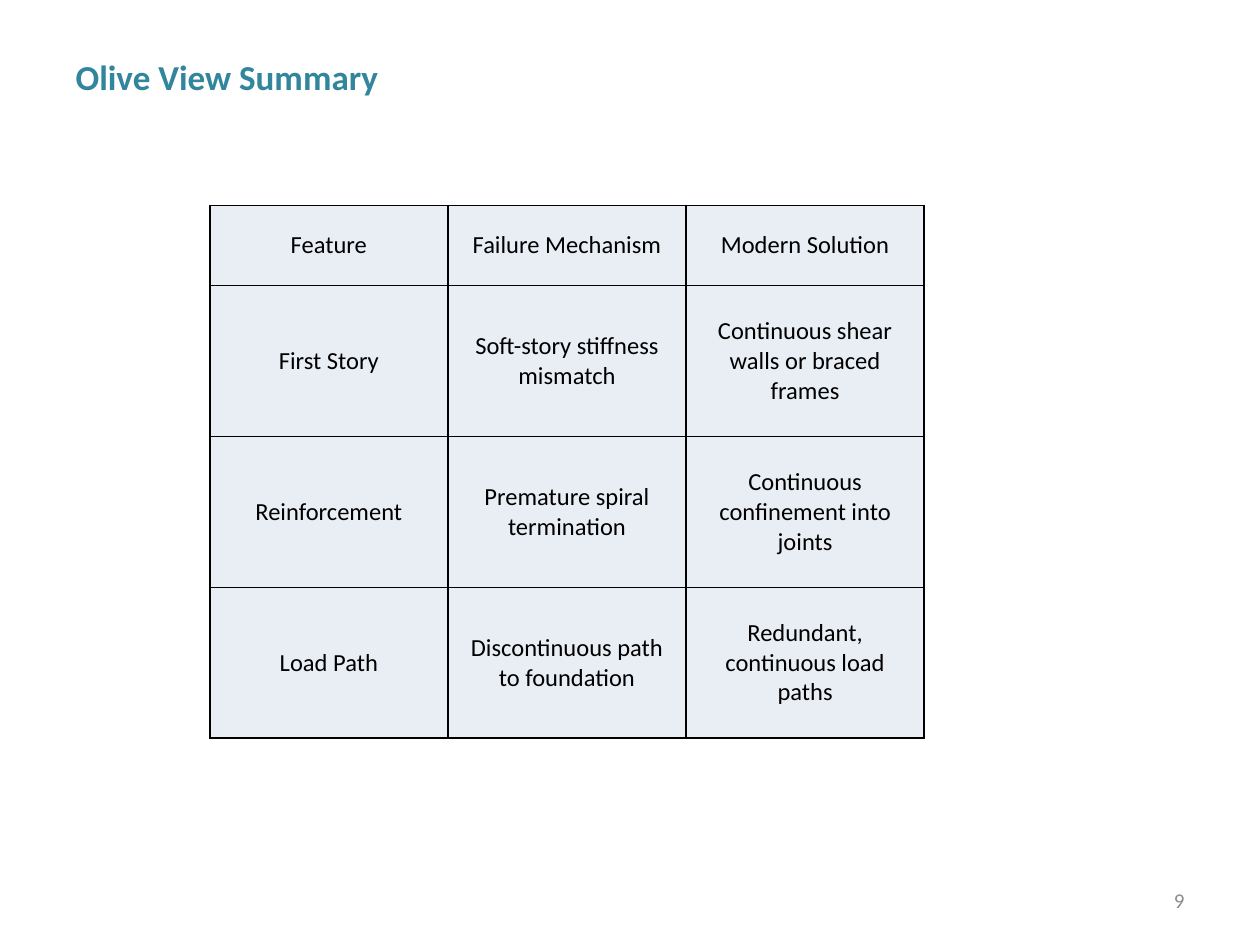
"""Build the Olive View summary slide with its table of failures and solutions."""
from dataclasses import dataclass

from lxml import etree
from pptx import Presentation
from pptx.dml.color import RGBColor
from pptx.enum.text import MSO_ANCHOR, MSO_AUTO_SIZE, PP_ALIGN
from pptx.oxml.ns import qn
from pptx.util import Cm, Pt

LEFT, CENTER, RIGHT = PP_ALIGN.LEFT, PP_ALIGN.CENTER, PP_ALIGN.RIGHT
TOP, MIDDLE = MSO_ANCHOR.TOP, MSO_ANCHOR.MIDDLE
NO_AUTO_SIZE = MSO_AUTO_SIZE.NONE
TITLE_ONLY_LAYOUT = 5

BORDER_COLOR = "000000"
CELL_FILL = "E9EDF4"
COLUMN_WIDTH = Cm(4.8)
ROW_HEIGHTS = [Cm(1.62)] + [Cm(3.04)] * 3
TABLE_ROWS = [
    ("Feature", "Failure Mechanism", "Modern Solution"),
    ("First Story", "Soft-story stiffness mismatch",
     "Continuous shear walls or braced frames"),
    ("Reinforcement", "Premature spiral termination",
     "Continuous confinement into joints"),
    ("Load Path", "Discontinuous path to foundation",
     "Redundant, continuous load paths"),
]


@dataclass(frozen=True)
class TextStyle:
    size: int
    color: str
    alignment: PP_ALIGN
    anchor: MSO_ANCHOR
    bold: bool = False


TITLE_STYLE = TextStyle(20, "31859C", LEFT, TOP, bold=True)
CELL_STYLE = TextStyle(14, "000000", CENTER, MIDDLE)
NUMBER_STYLE = TextStyle(12, "8C8C8C", RIGHT, MIDDLE)


def rgb(color: str) -> RGBColor:
    return RGBColor.from_string(color)


def write_text(text_frame, text: str, style: TextStyle) -> None:
    text_frame.text = text
    paragraph = text_frame.paragraphs[0]
    paragraph.alignment = style.alignment
    font = paragraph.runs[0].font
    font_values = {"name": "Calibri", "size": Pt(style.size), "bold": style.bold}
    for attribute, value in font_values.items():
        setattr(font, attribute, value)
    font.color.rgb = rgb(style.color)


def write_box(shape, text: str, style: TextStyle, position: dict) -> None:
    for attribute, value in position.items():
        setattr(shape, attribute, value)
    text_frame = shape.text_frame
    frame_values = {"word_wrap": True, "auto_size": NO_AUTO_SIZE,
                    "vertical_anchor": style.anchor}
    for attribute, value in frame_values.items():
        setattr(text_frame, attribute, value)
    write_text(text_frame, text, style)


def add_borders(cell) -> None:
    properties = cell._tc.get_or_add_tcPr()
    for index, side in enumerate(("a:lnL", "a:lnR", "a:lnT", "a:lnB")):
        line = etree.Element(qn(side), w=str(Pt(1)))
        fill = etree.SubElement(line, qn("a:solidFill"))
        etree.SubElement(fill, qn("a:srgbClr"), val=BORDER_COLOR)
        properties.insert(index, line)


def add_summary_table(slide) -> None:
    column_count = len(TABLE_ROWS[0])
    table = slide.shapes.add_table(
        len(TABLE_ROWS), column_count, Cm(4.23), Cm(4.14),
        COLUMN_WIDTH * column_count, sum(ROW_HEIGHTS)).table
    for column in table.columns:
        column.width = COLUMN_WIDTH
    for row, height, texts in zip(table.rows, ROW_HEIGHTS, TABLE_ROWS):
        row.height = height
        for cell, text in zip(row.cells, texts):
            cell.vertical_anchor = CELL_STYLE.anchor
            cell.fill.solid()
            cell.fill.fore_color.rgb = rgb(CELL_FILL)
            add_borders(cell)
            write_text(cell.text_frame, text, CELL_STYLE)


def main() -> None:
    presentation = Presentation()
    presentation.slide_width, presentation.slide_height = Cm(25.4), Cm(19.05)
    slide = presentation.slides.add_slide(
        presentation.slide_layouts[TITLE_ONLY_LAYOUT])

    title_position = {"left": Cm(1.27), "top": Cm(1), "width": Cm(9.53),
                      "height": Cm(1.12)}
    write_box(slide.shapes.title, "Olive View Summary", TITLE_STYLE, title_position)

    add_summary_table(slide)

    number_position = {"left": Cm(18.2), "top": Cm(17.65), "width": Cm(5.93),
                       "height": Cm(1.01)}
    number_box = slide.shapes.add_textbox(*number_position.values())
    write_box(number_box, "9", NUMBER_STYLE, number_position)

    presentation.save("out.pptx")


if __name__ == "__main__":
    main()
